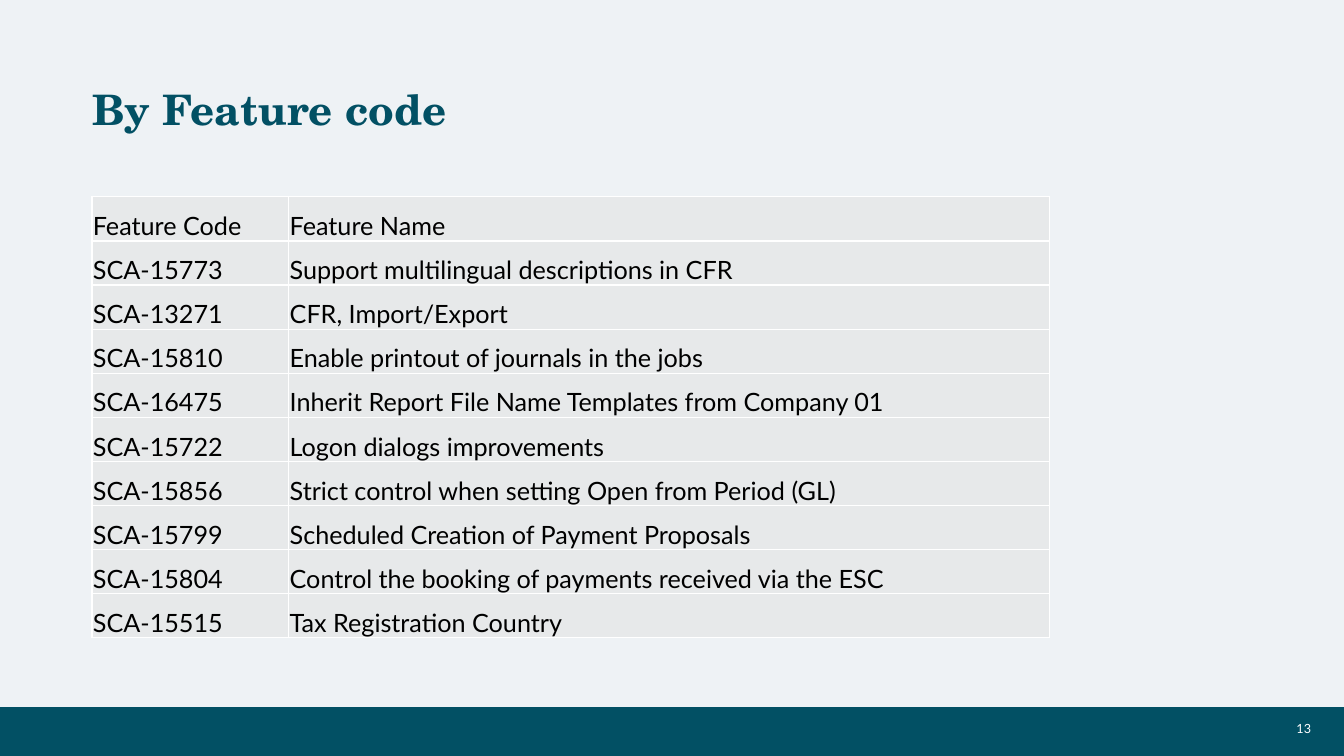
from lxml import etree
from pptx import Presentation
from pptx.dml.color import RGBColor
from pptx.enum.shapes import MSO_SHAPE
from pptx.enum.text import MSO_ANCHOR, PP_ALIGN
from pptx.oxml.ns import qn
from pptx.util import Cm, Pt

RECTANGLE = MSO_SHAPE.RECTANGLE
TOP, MIDDLE, BOTTOM = MSO_ANCHOR.TOP, MSO_ANCHOR.MIDDLE, MSO_ANCHOR.BOTTOM
LEFT, RIGHT = PP_ALIGN.LEFT, PP_ALIGN.RIGHT

TITLE = "By Feature code"
PAGE_NUMBER = "13"
FEATURES = [
    ("Feature Code", "Feature Name"),
    ("SCA-15773", "Support multilingual descriptions in CFR"),
    ("SCA-13271", "CFR, Import/Export"),
    ("SCA-15810", "Enable printout of journals in the jobs"),
    ("SCA-16475", "Inherit Report File Name Templates from Company 01"),
    ("SCA-15722", "Logon dialogs improvements"),
    ("SCA-15856", "Strict control when setting Open from Period (GL)"),
    ("SCA-15799", "Scheduled Creation of Payment Proposals"),
    ("SCA-15804", "Control the booking of payments received via the ESC"),
    ("SCA-15515", "Tax Registration Country"),
]

COLORS = {
    "background": "EEF2F5",
    "teal": "025064",
    "cell": "E7E9EA",
    "white": "FFFFFF",
    "black": "000000",
}
TITLE_FONT, BODY_FONT = "TeX Gyre Schola", "Lato"

SLIDE_WIDTH, SLIDE_HEIGHT = Cm(33.87), Cm(19.05)
FOOTER_HEIGHT = Cm(1.23)
MARGIN_LEFT = Cm(2.32)
TITLE_TOP, TITLE_HEIGHT = Cm(2.26), Cm(2.7)
TABLE_TOP, TABLE_HEIGHT = Cm(4.96), Cm(11.12)
COLUMN_WIDTHS = [Cm(4.96), Cm(19.16)]
CELL_MARGIN = Cm(0.02)


def paint(fill, color):
    fill.solid()
    fill.fore_color.rgb = RGBColor.from_string(COLORS[color])


def write(text_frame, text, font_name, size, color, bold=False, align=LEFT):
    text_frame.text = text
    paragraph = text_frame.paragraphs[0]
    paragraph.alignment = align
    font = paragraph.runs[0].font
    font.name, font.size, font.bold = font_name, Pt(size), bold
    font.color.rgb = RGBColor.from_string(COLORS[color])


def clear_margins(text_frame):
    text_frame.margin_left = text_frame.margin_right = 0
    text_frame.margin_top = text_frame.margin_bottom = 0


def add_borders(cell, color):
    properties = cell._tc.get_or_add_tcPr()
    for position, side in enumerate(("a:lnL", "a:lnR", "a:lnT", "a:lnB")):
        line = etree.Element(qn(side), w=str(Pt(1)))
        fill = etree.SubElement(line, qn("a:solidFill"))
        etree.SubElement(fill, qn("a:srgbClr"), val=COLORS[color])
        properties.insert(position, line)


def add_title(slide):
    title = slide.shapes.title
    title.left, title.top = MARGIN_LEFT, TITLE_TOP
    title.width, title.height = sum(COLUMN_WIDTHS), TITLE_HEIGHT
    text_frame = title.text_frame
    clear_margins(text_frame)
    text_frame.vertical_anchor = TOP
    write(text_frame, TITLE, TITLE_FONT, 30, "teal", bold=True)
    text_frame.paragraphs[0].line_spacing = 0.9


def add_feature_table(slide):
    table = slide.shapes.add_table(
        len(FEATURES), len(COLUMN_WIDTHS), MARGIN_LEFT, TABLE_TOP,
        sum(COLUMN_WIDTHS), TABLE_HEIGHT).table
    table.first_row = table.horz_banding = False
    for column, width in zip(table.columns, COLUMN_WIDTHS):
        column.width = width
    for row, feature in zip(table.rows, FEATURES):
        for cell, text in zip(row.cells, feature):
            write(cell.text_frame, text, BODY_FONT, 18, "black")
            cell.vertical_anchor = BOTTOM
            cell.margin_left = cell.margin_right = cell.margin_top = CELL_MARGIN
            cell.margin_bottom = 0
            paint(cell.fill, "cell")
            add_borders(cell, "white")


def add_footer(slide):
    bar = slide.shapes.add_shape(
        RECTANGLE, 0, SLIDE_HEIGHT - FOOTER_HEIGHT, SLIDE_WIDTH, FOOTER_HEIGHT)
    bar.shadow.inherit = False
    paint(bar.fill, "teal")
    bar.line.fill.background()

    number = slide.shapes.add_textbox(Cm(31.62), Cm(18.11), Cm(1.42), Cm(0.51))
    text_frame = number.text_frame
    text_frame.word_wrap = True
    clear_margins(text_frame)
    text_frame.vertical_anchor = MIDDLE
    write(text_frame, PAGE_NUMBER, BODY_FONT, 9, "white", align=RIGHT)


def main():
    presentation = Presentation()
    presentation.slide_width, presentation.slide_height = SLIDE_WIDTH, SLIDE_HEIGHT
    slide = presentation.slides.add_slide(presentation.slide_layouts[5])
    paint(slide.background.fill, "background")
    add_title(slide)
    add_feature_table(slide)
    add_footer(slide)
    presentation.save("out.pptx")


if __name__ == "__main__":
    main()
